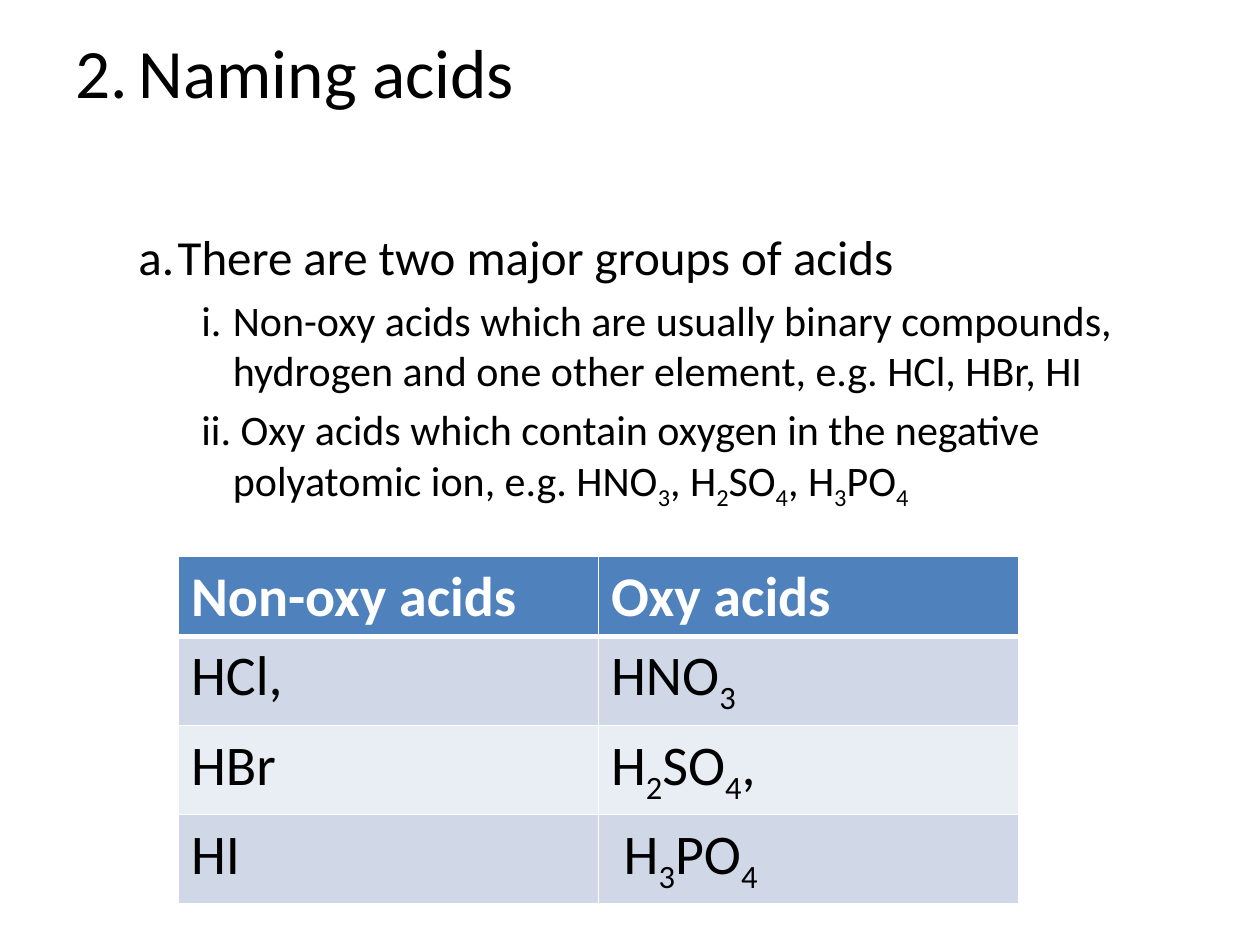
from lxml import etree
from pptx import Presentation
from pptx.dml.color import RGBColor
from pptx.enum import text
from pptx.oxml.ns import qn
from pptx.util import Pt

THEME = {
    "font": "Calibri", "ink": "000000", "white": "FFFFFF",
    "header": "4F81BD", "bands": ("D0D8E8", "E9EDF4"),
    "title": 39.6, "levels": {1: 28, 2: 24}, "table": 32,
    "rule": 1, "header_rule": 3,
}

# An underscore marks the next character as a subscript.
TITLE = "2.\tNaming acids\v"
OUTLINE = [
    (1, "a.\tThere are two major groups of acids"),
    (2, "i.\tNon-oxy acids which are usually binary compounds, "
        "hydrogen and one other element, e.g. HCl, HBr, HI"),
    (2, "ii. Oxy acids which contain oxygen in the negative "
        "polyatomic ion, e.g. HNO_3, H_2SO_4, H_3PO_4"),
]
ACIDS = [
    ("Non-oxy acids", "Oxy acids"),
    ("HCl,", "HNO_3"),
    ("HBr", "H_2SO_4,"),
    ("HI", " H_3PO_4"),
]

TITLE_BOX = (36, 21.6, 648, 90)
BODY_BOX = (36, 126, 648, 174)
TABLE_BOX = (102, 318, 480, 182)
INDENTS = {1: (58.5, -22.5), 2: (90, -18)}  # left margin, first line
SPACE_BEFORE = {1: 5.6, 2: 5}


def points(box):
    return [Pt(v) for v in box]


def add_runs(p, content, size, color, bold=False):
    """Write the text, lowering each character that follows an underscore."""
    first, *rest = content.split("_")
    pieces = [(first, False)]
    for part in rest:
        pieces += [(part[0], True), (part[1:], False)]
    for piece, lowered in pieces:
        if not piece:
            continue
        r = p.add_run()
        r.text = piece
        values = {"name": THEME["font"], "size": Pt(size), "bold": bold}
        for name, value in values.items():
            setattr(r.font, name, value)
        r.font.color.rgb = RGBColor.from_string(color)
        if lowered:
            r.font._element.set("baseline", "-25000")


def set_borders(cell, widths):
    """Draw white cell edges; widths maps L, R, T and B to points."""
    props = cell._tc.get_or_add_tcPr()
    for i, (side, width) in enumerate(widths.items()):
        line = etree.Element(qn(f"a:ln{side}"), w=str(Pt(width)))
        fill = etree.SubElement(line, qn("a:solidFill"))
        etree.SubElement(fill, qn("a:srgbClr"), val=THEME["white"])
        props.insert(i, line)


def add_title(s):
    sp = s.shapes.title
    sp.left, sp.top, sp.width, sp.height = points(TITLE_BOX)
    tf = sp.text_frame
    tf.text = TITLE
    tf.vertical_anchor = text.MSO_ANCHOR.MIDDLE
    p = tf.paragraphs[0]
    p.alignment = text.PP_ALIGN.LEFT
    for r in p.runs:
        r.font.name, r.font.size = THEME["font"], Pt(THEME["title"])
        r.font.color.rgb = RGBColor.from_string(THEME["ink"])


def add_outline(s):
    tf = s.shapes.add_textbox(*points(BODY_BOX)).text_frame
    tf.word_wrap = True
    for i, (level, content) in enumerate(OUTLINE):
        p = tf.add_paragraph() if i else tf.paragraphs[0]
        p.level = level
        p.space_before = Pt(SPACE_BEFORE[level])
        margin, first_line = INDENTS[level]
        props = p._p.get_or_add_pPr()
        props.set("marL", str(Pt(margin)))
        props.set("indent", str(Pt(first_line)))
        add_runs(p, content, THEME["levels"][level], THEME["ink"])


def add_acid_table(s):
    table = s.shapes.add_table(len(ACIDS), len(ACIDS[0]),
                               *points(TABLE_BOX)).table
    for i, row in enumerate(ACIDS):
        header = i == 0
        fill = THEME["header"] if header else THEME["bands"][(i - 1) % 2]
        color = THEME["white"] if header else THEME["ink"]
        widths = dict.fromkeys("LRTB", THEME["rule"])
        if i < 2:
            widths["B" if header else "T"] = THEME["header_rule"]
        for j, content in enumerate(row):
            cell = table.cell(i, j)
            cell.fill.solid()
            cell.fill.fore_color.rgb = RGBColor.from_string(fill)
            set_borders(cell, widths)
            add_runs(cell.text_frame.paragraphs[0], content,
                     THEME["table"], color, header)


def main():
    prs = Presentation()
    prs.slide_width, prs.slide_height = Pt(720), Pt(540)
    s = prs.slides.add_slide(prs.slide_layouts[5])
    add_title(s)
    add_outline(s)
    add_acid_table(s)
    prs.save("out.pptx")


if __name__ == "__main__":
    main()
